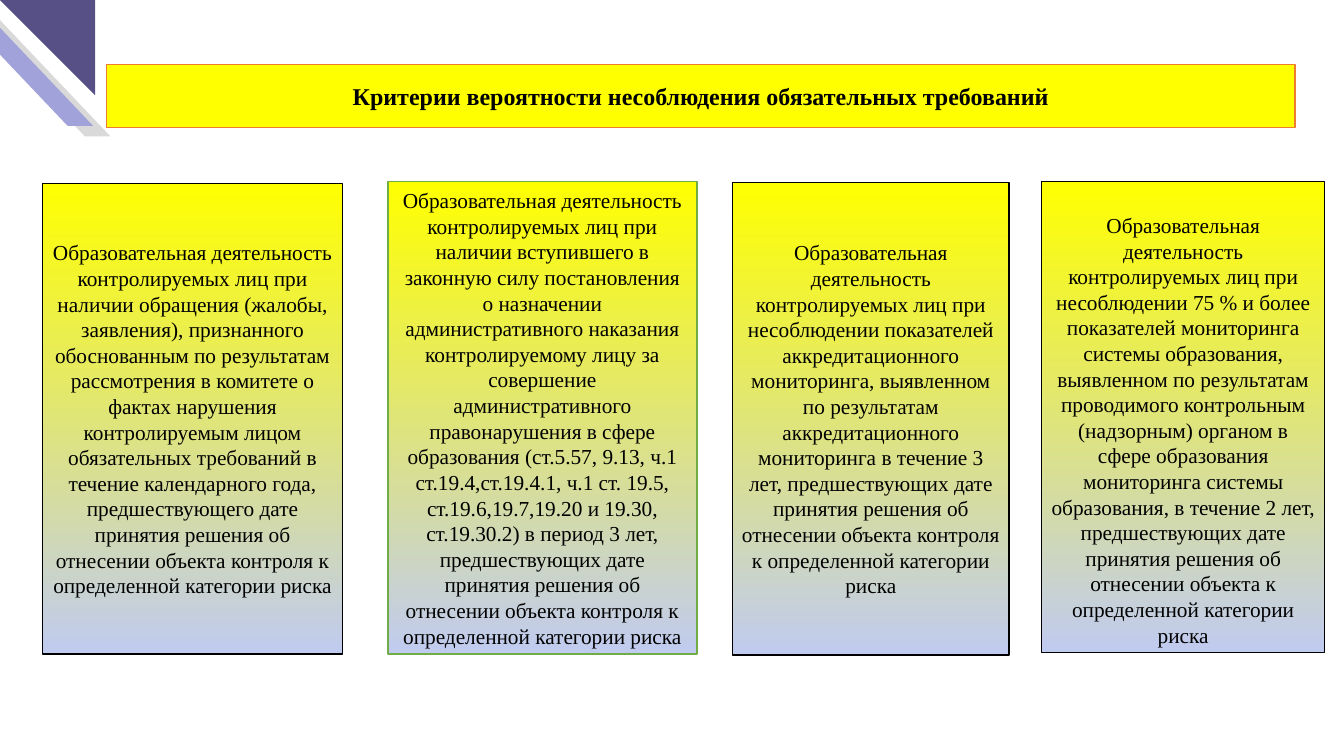
from pptx import Presentation
from pptx.dml.color import RGBColor
from pptx.enum.shapes import MSO_SHAPE
from pptx.enum.text import MSO_ANCHOR, PP_ALIGN
from pptx.util import Pt

FONT = "Times New Roman"
YELLOW, LILAC, BLACK = "FFFF00", "C0CBF0", "000000"
ORANGE, GREEN = "ED7D31", "70AD47"
INSET = 3.6

# left, top, width, height, outline, top inset, text
CRITERIA = [
    (31.7, 137.5, 225.4, 352.8, BLACK, INSET,
     "Образовательная деятельность контролируемых лиц при наличии обращения "
     "(жалобы, заявления), признанного обоснованным по результатам рассмотрения "
     "в комитете о фактах нарушения контролируемым лицом обязательных требований "
     "в течение календарного года, предшествующего дате принятия решения об "
     "отнесении объекта контроля к определенной категории риска"),
    (290.9, 136.1, 231.8, 354.2, GREEN, INSET,
     "Образовательная деятельность контролируемых лиц при наличии вступившего "
     "в законную силу постановления о назначении административного наказания "
     "контролируемому лицу за совершение административного правонарушения в сфере "
     "образования (ст.5.57, 9.13, ч.1 ст.19.4,ст.19.4.1, ч.1 ст. 19.5, "
     "ст.19.6,19.7,19.20 и 19.30, ст.19.30.2) в период 3 лет, предшествующих дате "
     "принятия решения об отнесении объекта контроля к определенной категории риска"),
    (549.4, 136.8, 207.4, 354.2, BLACK, INSET,
     "Образовательная деятельность контролируемых лиц при несоблюдении показателей "
     "аккредитационного мониторинга, выявленном по результатам аккредитационного "
     "мониторинга в течение 3 лет, предшествующих дате принятия решения об "
     "отнесении объекта контроля к определенной категории риска"),
    (781.2, 136.1, 212.4, 352.8, BLACK, 22.8,
     "Образовательная деятельность контролируемых лиц при несоблюдении 75 % и более "
     "показателей мониторинга системы образования, выявленном по результатам "
     "проводимого контрольным (надзорным) органом в сфере образования мониторинга "
     "системы образования, в течение 2 лет, предшествующих дате принятия решения об "
     "отнесении объекта к определенной категории риска"),
]


def color(hex_string):
    return RGBColor.from_string(hex_string)


def add_shape(slide, kind, box, fill, outline=None):
    """Add a shape; a pair of fill colours makes a top-to-bottom gradient."""
    shape = slide.shapes.add_shape(kind, *(Pt(length) for length in box))
    shape.shadow.inherit = False
    if isinstance(fill, tuple):
        shape.fill.gradient()
        shape.fill.gradient_angle = 270
        for stop, stop_color in zip(shape.fill.gradient_stops, fill):
            stop.color.rgb = color(stop_color)
    else:
        shape.fill.solid()
        shape.fill.fore_color.rgb = color(fill)
    if outline:
        shape.line.color.rgb = color(outline)
        shape.line.width = Pt(1)
    else:
        shape.line.fill.background()
    return shape


def flip(shape, *directions):
    for direction in directions:
        shape._element.spPr.xfrm.set(direction, "1")


def set_text(shape, text, size, bold=False, top_inset=INSET):
    frame = shape.text_frame
    frame.word_wrap = True
    frame.vertical_anchor = MSO_ANCHOR.MIDDLE
    frame.margin_top = Pt(top_inset)
    frame.text = text
    paragraph = frame.paragraphs[0]
    paragraph.alignment = PP_ALIGN.CENTER
    paragraph.font.name = FONT
    paragraph.font.size = Pt(size)
    paragraph.font.bold = bold
    paragraph.font.color.rgb = color(BLACK)


def add_corner(slide):
    for left, top, fill in [(-25.9, 7.9, "D9D9D9"), (-38.9, 0, "A2A2DA")]:
        stripe = add_shape(slide, MSO_SHAPE.PARALLELOGRAM, (left, top, 108.7, 94.3), fill)
        stripe.adjustments[0] = 0.95
        flip(stripe, "flipH")
    triangle = add_shape(slide, MSO_SHAPE.RIGHT_TRIANGLE, (0, 0, 71.3, 71.3), "565087")
    flip(triangle, "flipH", "flipV")


def main():
    presentation = Presentation()
    presentation.slide_width = Pt(1008)
    presentation.slide_height = Pt(566.64)
    slide = presentation.slides.add_slide(presentation.slide_layouts[6])

    add_corner(slide)
    title = add_shape(slide, MSO_SHAPE.RECTANGLE, (79.9, 48.2, 891.4, 47.5), YELLOW, ORANGE)
    set_text(title, "Критерии вероятности несоблюдения обязательных требований", 18, bold=True)
    for *box, outline, top_inset, text in CRITERIA:
        card = add_shape(slide, MSO_SHAPE.RECTANGLE, box, (YELLOW, LILAC), outline)
        set_text(card, text, 16, top_inset=top_inset)

    presentation.save("out.pptx")


if __name__ == "__main__":
    main()
